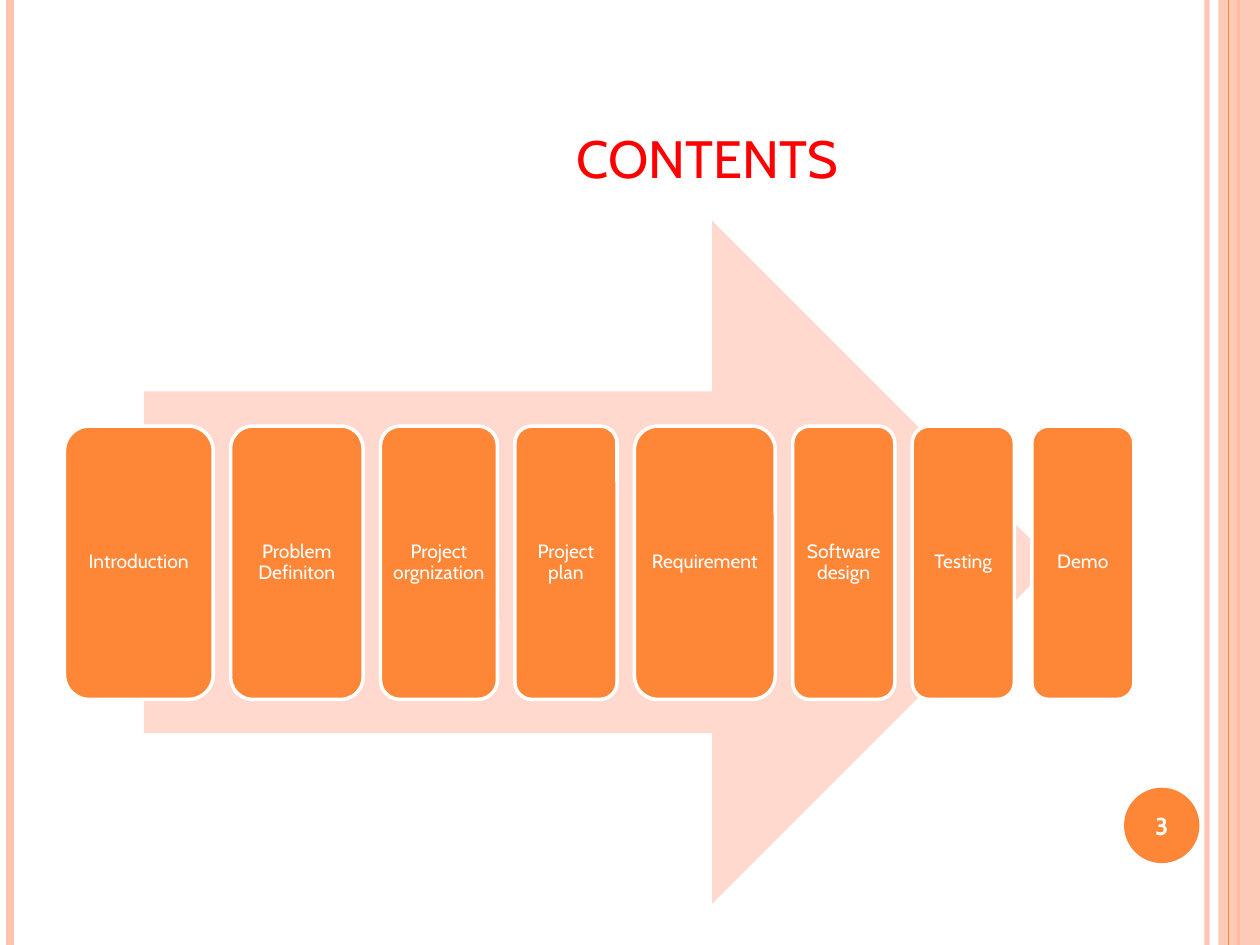
from lxml import etree
from pptx import Presentation
from pptx import util as u
from pptx.dml.color import RGBColor
from pptx.enum import shapes, text
from pptx.oxml.ns import qn

COLORS = {
    "orange": "FE8637",
    "peach": "FEC3AE",
    "blush": "FFD9CE",
    "white": "FFFFFF",
    "red": "FF0000",
}
FONT = "Cabin"
WIDTH, HEIGHT = 25.4, 19.05
# Each step: label and card width in cm
STEPS = [
    ("Introduction", 3.0),
    ("Problem Definiton", 2.67),
    ("Project orgnization", 2.36),
    ("Project plan", 2.06),
    ("Requirement", 2.84),
    ("Software design", 2.06),
    ("Testing", 2.06),
    ("Demo", 2.06),
]
GAP = 0.35


class Deck:
    """Holds the style and the current slide; lengths are in cm."""

    def __init__(self):
        self.prs = Presentation()
        self.prs.slide_width = u.Cm(WIDTH)
        self.prs.slide_height = u.Cm(HEIGHT)
        self.slide = self.prs.slides.add_slide(self.prs.slide_layouts[5])

    def color(self, name):
        return RGBColor.from_string(COLORS[name])

    def fade(self, part, alpha):
        """Make a solid fill or line partly transparent, alpha in percent."""
        tone = next(part.iter(qn("a:srgbClr")))
        etree.SubElement(tone, qn("a:alpha")).set("val", str(alpha * 1000))

    def label(self, shape, words, size, color="white", bold=False):
        frame = shape.text_frame
        frame.text = words
        frame.word_wrap = True
        frame.auto_size = text.MSO_AUTO_SIZE.NONE
        frame.vertical_anchor = text.MSO_ANCHOR.MIDDLE
        para = frame.paragraphs[0]
        para.alignment = text.PP_ALIGN.CENTER
        font = para.runs[0].font
        font.name, font.size, font.bold = FONT, u.Pt(size), bold
        font.color.rgb = self.color(color)
        return frame

    def title(self, words, x, y, w, h, inset):
        shape = self.slide.shapes.title
        shape.left, shape.top = u.Cm(x), u.Cm(y)
        shape.width, shape.height = u.Cm(w), u.Cm(h)
        frame = self.label(shape, words, 30, "red")
        frame.vertical_anchor = text.MSO_ANCHOR.BOTTOM
        frame.margin_left = u.Cm(inset)

    def rule(self, x, color, width, alpha=100):
        """Draw a vertical line over the full slide height."""
        line = self.slide.shapes.add_connector(
            shapes.MSO_CONNECTOR.STRAIGHT, u.Cm(x), 0, u.Cm(x), u.Cm(HEIGHT))
        line.line.color.rgb = self.color(color)
        line.line.width = u.Pt(width)
        props = line._element.spPr
        etree.SubElement(props, qn("a:effectLst"))
        if alpha < 100:
            self.fade(props, alpha)

    def shape(self, kind, x, y, w, h, fill, alpha=100):
        item = self.slide.shapes.add_shape(
            kind, u.Cm(x), u.Cm(y), u.Cm(w), u.Cm(h))
        item.shadow.inherit = False
        item.fill.solid()
        item.fill.fore_color.rgb = self.color(fill)
        item.line.fill.background()
        if alpha < 100:
            self.fade(item._element.spPr, alpha)
        return item

    def card(self, words, x, y, w, h):
        item = self.shape(shapes.MSO_SHAPE.ROUNDED_RECTANGLE,
                          x, y, w, h, "orange")
        item.line.color.rgb = self.color("white")
        item.line.width = u.Pt(2)
        frame = self.label(item, words, 11)
        frame.margin_left = frame.margin_right = 0
        frame.paragraphs[0].line_spacing = 0.9

    def badge(self, words, x, y, size):
        item = self.shape(shapes.MSO_SHAPE.OVAL, x, y, size, size, "orange")
        frame = self.label(item, words, 14, bold=True)
        frame.margin_left = frame.margin_right = 0


def main():
    deck = Deck()
    deck.rule(24.33, "peach", 3, 93)
    deck.rule(0.2, "peach", 4.5)
    deck.rule(24.97, "orange", 1.5)
    deck.shape(shapes.MSO_SHAPE.RECTANGLE,
               24.56, 0, 0.84, HEIGHT, "peach", 87)
    deck.rule(24.76, "orange", 0.75)
    deck.badge("3", 22.66, 15.88, 1.52)
    deck.title("CONTENTS", 1.27, 0.76, 20.75, 3.18, inset=5.5)

    deck.shape(shapes.MSO_SHAPE.RIGHT_ARROW, 2.9, 4.45, 18.34, 13.77, "blush")
    x = 1.3
    for name, width in STEPS:
        deck.card(name, x, 8.59, width, 5.51)
        x += width + GAP

    deck.prs.save("out.pptx")


if __name__ == "__main__":
    main()
